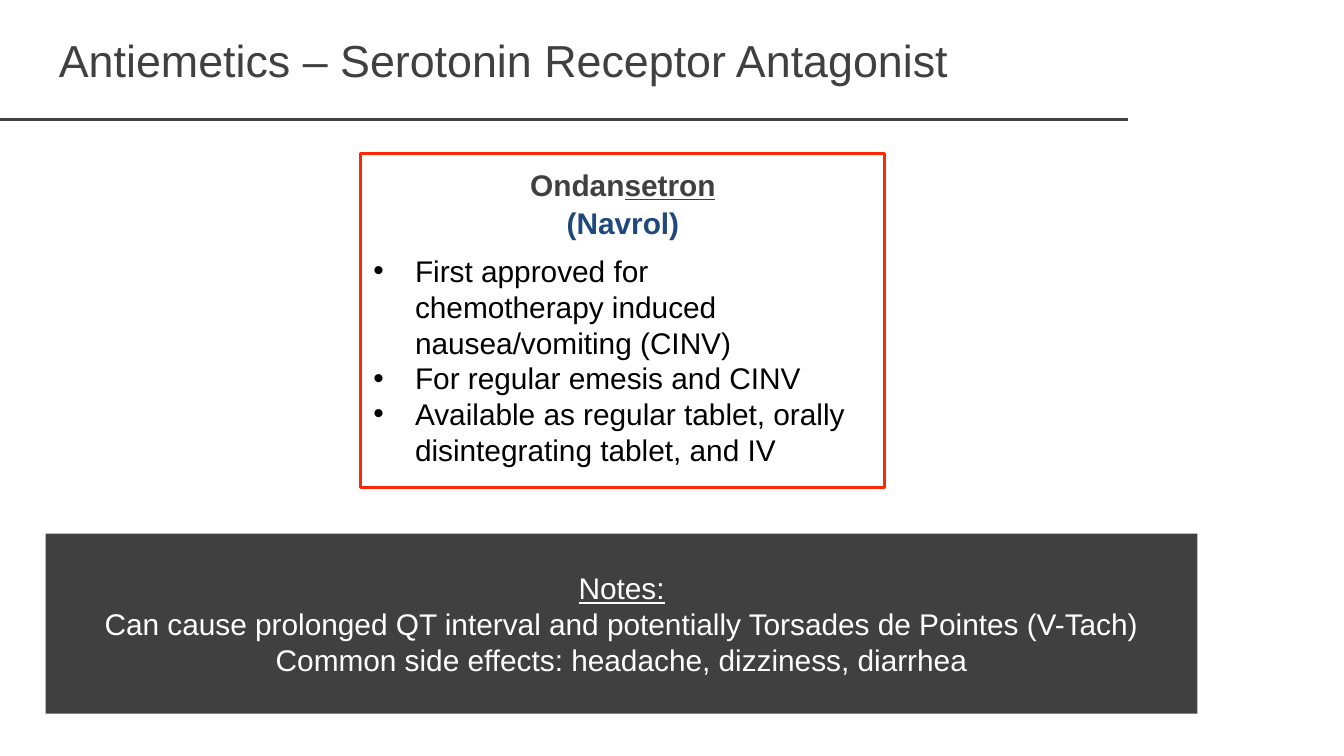
from lxml import etree
from pptx import Presentation
from pptx.dml.color import RGBColor
from pptx.enum.shapes import MSO_CONNECTOR, MSO_SHAPE
from pptx.enum.text import MSO_ANCHOR, PP_ALIGN
from pptx.oxml.ns import qn
from pptx.util import Inches, Pt

COLORS = {
    "ink": "404040",
    "frame": "FD2906",
    "brand": "1F497D",
    "body": "000000",
    "light": "FFFFFF",
}


def rgb(name):
    return RGBColor.from_string(COLORS[name])


def add_bullet(paragraph, indent):
    properties = paragraph._p.get_or_add_pPr()
    properties.set("marL", str(Inches(indent)))
    properties.set("indent", str(-Inches(indent)))
    etree.SubElement(properties, qn("a:buFont")).set("typeface", "Arial")
    etree.SubElement(properties, qn("a:buChar")).set("char", "•")


def write(frame, paragraphs, size=16, color="ink", bold=False,
          align=PP_ALIGN.LEFT, anchor=MSO_ANCHOR.MIDDLE, bullet_indent=None):
    """Fill a frame; each paragraph is a list of (text, underlined) runs."""
    frame.word_wrap = True
    frame.vertical_anchor = anchor
    for index, runs in enumerate(paragraphs):
        paragraph = frame.paragraphs[0] if index == 0 else frame.add_paragraph()
        paragraph.alignment = align
        if bullet_indent:
            add_bullet(paragraph, bullet_indent)
        for text, underlined in runs:
            for line_index, line in enumerate(text.split("\n")):
                if line_index:
                    paragraph.add_line_break()
                run = paragraph.add_run()
                run.text = line
                run.font.name = "Arial"
                run.font.size = Pt(size)
                run.font.bold = bold
                run.font.underline = underlined
                run.font.color.rgb = rgb(color)


class DrugSlide:
    line_width = Pt(1.5)

    def __init__(self, presentation):
        self.slide = presentation.slides.add_slide(presentation.slide_layouts[6])

    def text(self, box, paragraphs, **style):
        textbox = self.slide.shapes.add_textbox(*map(Inches, box))
        write(textbox.text_frame, paragraphs, **style)

    def rectangle(self, box, fill=None, outline=None):
        rectangle = self.slide.shapes.add_shape(
            MSO_SHAPE.RECTANGLE, *map(Inches, box))
        rectangle.shadow.inherit = False
        if fill:
            rectangle.fill.solid()
            rectangle.fill.fore_color.rgb = rgb(fill)
        else:
            rectangle.fill.background()
        if outline:
            rectangle.line.color.rgb = rgb(outline)
            rectangle.line.width = self.line_width
        else:
            rectangle.line.fill.background()
        return rectangle

    def rule(self, start_x, end_x, y, color):
        rule = self.slide.shapes.add_connector(
            MSO_CONNECTOR.STRAIGHT,
            Inches(start_x), Inches(y), Inches(end_x), Inches(y))
        rule.line.color.rgb = rgb(color)
        rule.line.width = self.line_width
        etree.SubElement(rule._element.spPr, qn("a:effectLst"))


def main():
    presentation = Presentation()
    presentation.slide_width = Inches(10)
    presentation.slide_height = presentation.slide_width * 9 // 16
    page = DrugSlide(presentation)

    page.rule(0, 8.39, 0.89, "ink")
    page.rectangle((2.68, 1.14, 3.9, 2.49), outline="frame")
    page.text((0.34, 0.13, 8.03, 0.63),
              [[("Antiemetics – Serotonin Receptor Antagonist", False)]], size=24)
    page.text((2.81, 1.25, 3.65, 0.24),
              [[("Ondan", False), ("setron", True)]],
              bold=True, align=PP_ALIGN.CENTER)

    notes = page.rectangle((0.34, 3.97, 8.57, 1.34), fill="ink")
    write(notes.text_frame, [
        [("Notes:", True)],
        [("Can cause prolonged QT interval and potentially "
          "Torsades de Pointes (V-Tach)", False)],
        [("Common side effects: headache, dizziness, diarrhea", False)],
    ], color="light", align=PP_ALIGN.CENTER)

    page.text((2.59, 1.57, 4.09, 0.17), [[("(Navrol)", False)]],
              color="brand", bold=True, align=PP_ALIGN.CENTER)
    facts = [
        "First approved for\nchemotherapy induced\nnausea/vomiting (CINV)",
        "For regular emesis and CINV",
        "Available as regular tablet, orally disintegrating tablet, and IV",
    ]
    page.text((2.68, 1.83, 4.09, 1.72), [[(fact, False)] for fact in facts],
              color="body", anchor=MSO_ANCHOR.TOP, bullet_indent=0.31)

    presentation.save("out.pptx")


if __name__ == "__main__":
    main()
